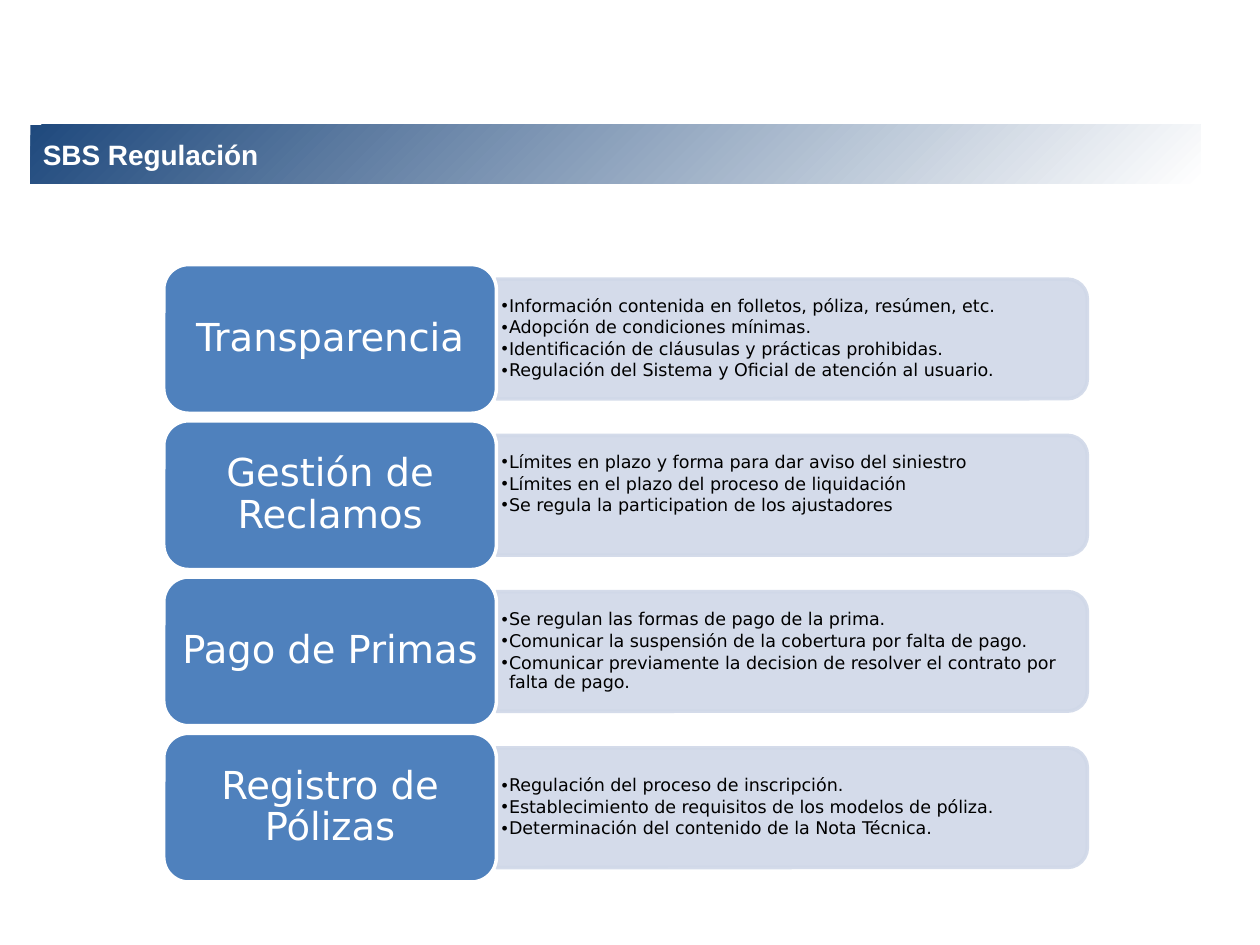
from dataclasses import dataclass

from lxml.etree import SubElement
from pptx import Presentation
from pptx.dml.color import RGBColor
from pptx.enum.shapes import MSO_SHAPE as Shape
from pptx.enum.text import MSO_ANCHOR as Anchor, MSO_AUTO_SIZE as AutoSize, PP_ALIGN as Align
from pptx.oxml.ns import qn
from pptx.util import Inches, Pt

WHITE = RGBColor(0xFF, 0xFF, 0xFF)
BLACK = RGBColor(0, 0, 0)
BLUE = RGBColor(0x4F, 0x81, 0xBD)
PALE = RGBColor(0xD0, 0xD8, 0xE8)
NAVY = RGBColor(0x1F, 0x49, 0x7D)
HEADING_FONT = "Arial"
BODY_FONT = "DejaVu Sans"

CARD_LEFT, CARD_TOP, CARD_WIDTH, CARD_HEIGHT = 1.3, 2.1, 2.64, 1.18
ROW_PITCH = 1.24
PANEL_LEFT, PANEL_WIDTH, PANEL_HEIGHT = 3.94, 4.69, 0.95
LIST_WIDTH, LIST_HEIGHT = 4.64, 0.85


@dataclass
class Topic:
    name: str
    points: list[str]
    bottom_inset: float = 0.02


TOPICS = [
    Topic("Transparencia", [
        "Información contenida en folletos, póliza, resúmen, etc.",
        "Adopción de condiciones mínimas.",
        "Identificación de cláusulas y prácticas prohibidas.",
        "Regulación del Sistema y Oficial de atención al usuario.",
    ]),
    Topic("Gestión de Reclamos", [
        "Límites en plazo y forma para dar aviso del siniestro",
        "Límites en el plazo del proceso de liquidación",
        "Se regula la participation de los ajustadores",
    ], 0.19),
    Topic("Pago de Primas", [
        "Se regulan las formas de pago de la prima.",
        "Comunicar la suspensión de la cobertura por falta de pago.",
        "Comunicar previamente la decision de resolver el contrato por falta de pago.",
    ]),
    Topic("Registro de Pólizas", [
        "Regulación del proceso de inscripción.",
        "Establecimiento de requisitos de los modelos de póliza.",
        "Determinación del contenido de la Nota Técnica.",
    ]),
]


def place(shape, left: float, top: float, width: float, height: float) -> None:
    shape.left, shape.top = Inches(left), Inches(top)
    shape.width, shape.height = Inches(width), Inches(height)


def set_frame(frame, side: float, top: float, bottom: float) -> None:
    frame.auto_size = AutoSize.NONE
    frame.word_wrap = True
    frame.vertical_anchor = Anchor.MIDDLE
    frame.margin_left = frame.margin_right = Inches(side)
    frame.margin_top, frame.margin_bottom = Inches(top), Inches(bottom)


def style(para, size: float, font: str, color: RGBColor, bold: bool = False) -> None:
    para.space_before = Pt(0)
    for span in para.runs:
        span.font.size = Pt(size)
        span.font.name = font
        span.font.bold = bold
        span.font.color.rgb = color


def add_block(page, kind: Shape, fill: RGBColor, line: RGBColor, *bounds: float):
    block = page.shapes.add_shape(kind, *map(Inches, bounds))
    block.shadow.inherit = False
    block.fill.solid()
    block.fill.fore_color.rgb = fill
    block.line.color.rgb = line
    block.line.width = Pt(2)
    return block


def add_panel(page, middle: float) -> None:
    left = PANEL_LEFT + (PANEL_WIDTH - PANEL_HEIGHT) / 2
    panel = add_block(page, Shape.ROUND_2_SAME_RECTANGLE, PALE, PALE,
                      left, middle - PANEL_WIDTH / 2, PANEL_HEIGHT, PANEL_WIDTH)
    panel.rotation = 90
    for color in panel._element.spPr.iter(qn("a:srgbClr")):
        SubElement(color, qn("a:alpha"), val="90000")


def add_card(page, name: str, top: float) -> None:
    card = add_block(page, Shape.ROUNDED_RECTANGLE, BLUE, WHITE,
                     CARD_LEFT, top, CARD_WIDTH, CARD_HEIGHT)
    set_frame(card.text_frame, 0.09, 0.05, 0.05)
    card.text_frame.text = name
    para = card.text_frame.paragraphs[0]
    para.alignment = Align.CENTER
    para.line_spacing = 0.9
    style(para, 22, BODY_FONT, WHITE)


def fill_list(page, box, topic: Topic, middle: float) -> None:
    page.shapes._spTree.append(box._element)
    place(box, PANEL_LEFT, middle - LIST_HEIGHT / 2, LIST_WIDTH, LIST_HEIGHT)
    frame = box.text_frame
    set_frame(frame, 0.04, 0.02, topic.bottom_inset)
    frame.text = "\n".join(topic.points)
    for para in frame.paragraphs:
        properties = para._p.get_or_add_pPr()
        properties.set("marL", str(Inches(0.06)))
        properties.set("indent", str(Inches(-0.06)))
        SubElement(properties, qn("a:buChar"), char="•")
        para.alignment = Align.LEFT
        para.line_spacing = 0.9
        para.space_after = Pt(1.5)
        style(para, 10, BODY_FONT, BLACK)


def fill_title(title) -> None:
    place(title, 0.24, 0.99, 9.29, 0.47)
    title.fill.gradient()
    for stop, color in zip(title.fill.gradient_stops, (WHITE, NAVY)):
        stop.color.rgb = color
    first, last = title.fill.gradient_stops
    first.position, last.position = 0, 1
    gradient = title._element.spPr.find(qn("a:gradFill"))
    gradient.remove(gradient.find(qn("a:lin")))
    radial = SubElement(gradient, qn("a:path"), path="circle")
    SubElement(radial, qn("a:fillToRect"), l="100000", t="100000")
    set_frame(title.text_frame, 0.1, 0.05, 0.05)
    title.text_frame.text = "SBS Regulación"
    para = title.text_frame.paragraphs[0]
    para.alignment = Align.LEFT
    style(para, 16, HEADING_FONT, WHITE, bold=True)


def main() -> None:
    deck = Presentation()
    deck.slide_width, deck.slide_height = Inches(10), Inches(7.5)
    page = deck.slides.add_slide(deck.slide_layouts.get_by_name("Comparison"))
    title, *boxes = page.placeholders
    fill_title(title)
    for row, (topic, box) in enumerate(zip(TOPICS, boxes)):
        top = CARD_TOP + row * ROW_PITCH
        middle = top + CARD_HEIGHT / 2
        add_panel(page, middle)
        fill_list(page, box, topic, middle)
        add_card(page, topic.name, top)
    deck.save("out.pptx")


if __name__ == "__main__":
    main()
